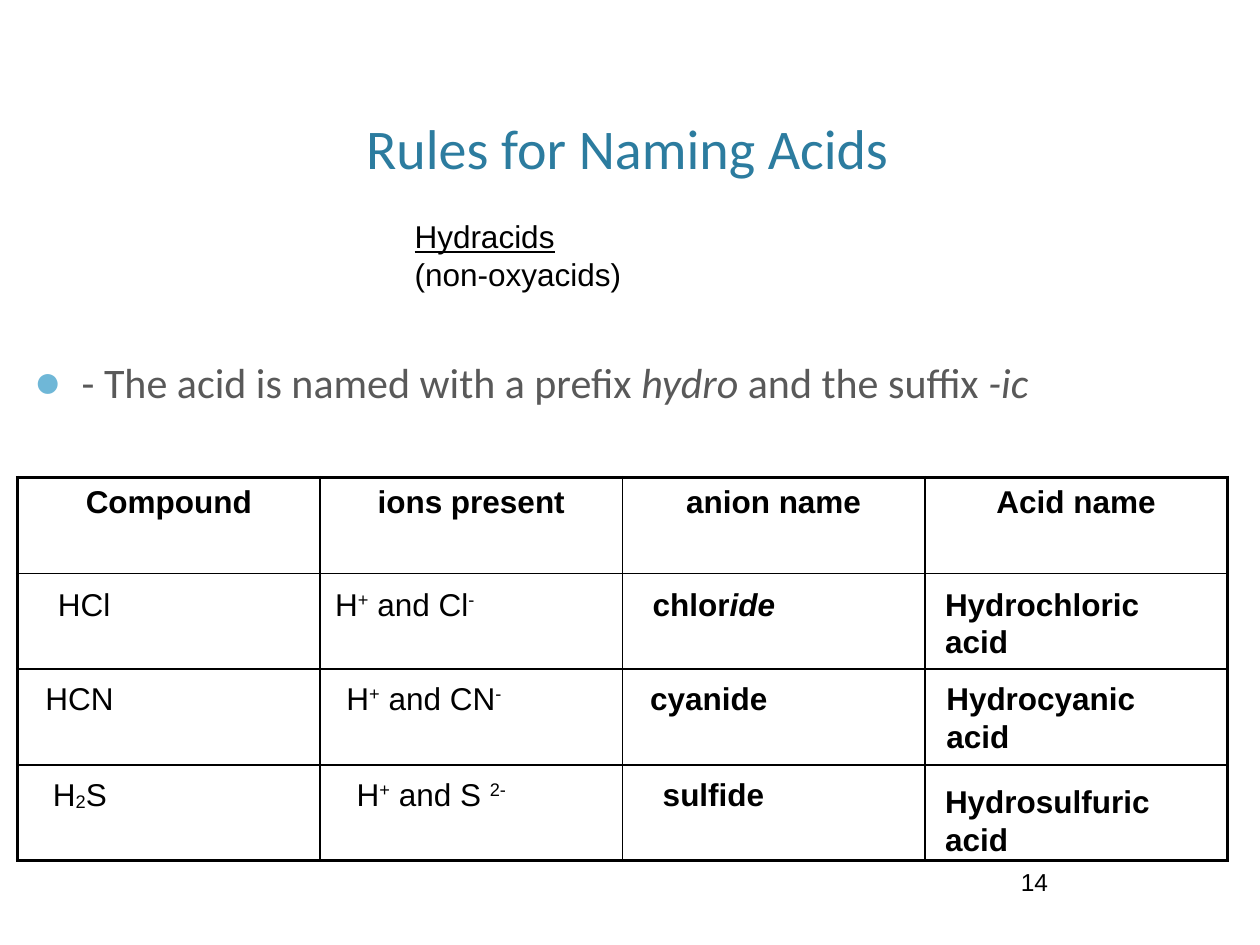
from dataclasses import dataclass

from lxml import etree
from pptx import Presentation
from pptx.dml.color import RGBColor
from pptx.enum.text import MSO_ANCHOR, MSO_AUTO_SIZE, PP_ALIGN
from pptx.oxml.ns import qn
from pptx.util import Pt

CENTER = PP_ALIGN.CENTER
BOTTOM = MSO_ANCHOR.BOTTOM
NO_AUTOFIT = MSO_AUTO_SIZE.NONE
TITLE_ONLY = 5


@dataclass(frozen=True)
class Theme:
    title: str = "2C7C9F"
    body: str = "595959"
    bullet: str = "6FB7D7"
    ink: str = "000000"
    heading_font: str = "Calibri"
    text_font: str = "Arial"
    title_size: int = 32
    body_size: int = 24
    text_size: int = 18
    number_size: int = 14
    inner_line: float = 1
    outer_line: float = 2.25


theme = Theme()


def set_font(paragraph, name, size, color, bold=False):
    font = paragraph.font
    font.name = name
    font.size = Pt(size)
    font.bold = bold
    font.color.rgb = RGBColor.from_string(color)


def add_text(left, top, width, height, margins=(2.88, 0, 2.88, 0), wrap=True):
    box = slide.shapes.add_textbox(Pt(left), Pt(top), Pt(width), Pt(height))
    frame = box.text_frame
    frame.word_wrap = wrap
    (frame.margin_left, frame.margin_top,
     frame.margin_right, frame.margin_bottom) = map(Pt, margins)
    return frame


presentation = Presentation()
presentation.slide_width = Pt(720)
presentation.slide_height = Pt(540)
slide = presentation.slides.add_slide(presentation.slide_layouts[TITLE_ONLY])

# Title
title = slide.shapes.title
title.left, title.top, title.width, title.height = Pt(54), Pt(54), Pt(612), Pt(53)
title_frame = title.text_frame
title_frame.text = "Rules for Naming Acids"
title_frame.auto_size = NO_AUTOFIT
title_frame.vertical_anchor = BOTTOM
title_frame.margin_right = Pt(10.08)
title_frame.paragraphs[0].alignment = CENTER
set_font(title_frame.paragraphs[0], theme.heading_font, theme.title_size, theme.title)

# Naming rule, with a bullet
rule = add_text(12.24, 102.24, 694.08, 437.76, (7.2, 101.5, 10.08, 3.6)).paragraphs[0]
set_font(rule, theme.heading_font, theme.body_size, theme.body)
for text, italic in [("- The acid is named with a prefix ", False), ("hydro ", True),
                     ("and the suffix", False), (" -ic", True)]:
    run = rule.add_run()
    run.text = text
    run.font.italic = italic
properties = rule._p.get_or_add_pPr()
properties.set("marL", str(Pt(27.36)))
properties.set("indent", str(-Pt(27.36)))
bullet_color = etree.Element(qn("a:buClr"))
etree.SubElement(bullet_color, qn("a:srgbClr"), val=theme.bullet)
bullet_parts = [bullet_color,
                etree.Element(qn("a:buSzPct"), val="110000"),
                etree.Element(qn("a:buFont"), typeface=theme.text_font),
                etree.Element(qn("a:buChar"), char="●")]
for position, part in enumerate(bullet_parts):
    properties.insert(position, part)

# Slide number, without side margins so that it stays on one line
number = add_text(578.88, 491.76, 24.48, 23.76, (0, 3.6, 0, 3.6), wrap=False).paragraphs[0]
number.text = "14"
number.alignment = CENTER
set_font(number, theme.text_font, theme.number_size, theme.ink)

# Subtitle
subtitle = add_text(234, 123.84, 192.96, 63.36)
subtitle.text = "Hydracids\n(non-oxyacids)"
for paragraph in subtitle.paragraphs:
    set_font(paragraph, theme.text_font, theme.text_size, theme.ink)
subtitle.paragraphs[0].runs[0].font.underline = True

# Table grid: heavy outside, thin inside
headers = ["Compound", "ions present", "anion name", "Acid name"]
row_count, column_count = 4, len(headers)
column_width, row_height = 172.8, 54.72
table = slide.shapes.add_table(row_count, column_count, Pt(10.08), Pt(272.88),
                               Pt(column_width * column_count),
                               Pt(row_height * row_count)).table
table.first_row = table.horz_banding = False
for column in table.columns:
    column.width = Pt(column_width)
for row in table.rows:
    row.height = Pt(row_height)

for row_index in range(row_count):
    for column_index in range(column_count):
        cell = table.cell(row_index, column_index)
        cell.fill.background()
        edges = [("a:lnL", column_index == 0),
                 ("a:lnR", column_index == column_count - 1),
                 ("a:lnT", row_index == 0),
                 ("a:lnB", row_index == row_count - 1)]
        for position, (tag, is_outer) in enumerate(edges):
            width = theme.outer_line if is_outer else theme.inner_line
            line = etree.Element(qn(tag), w=str(Pt(width)))
            fill = etree.SubElement(line, qn("a:solidFill"))
            etree.SubElement(fill, qn("a:srgbClr"), val=theme.ink)
            cell._tc.get_or_add_tcPr().insert(position, line)

for column_index, header in enumerate(headers):
    cell = table.cell(0, column_index)
    cell.margin_left = cell.margin_right = Pt(4.32)
    cell.margin_top = cell.margin_bottom = Pt(4.32)
    cell.text = header
    paragraph = cell.text_frame.paragraphs[0]
    paragraph.alignment = CENTER
    set_font(paragraph, theme.text_font, theme.text_size, theme.ink, bold=True)

# Entries over the grid: left, top, width, height, bold, runs as (text, baseline %, italic)
entries = [
    (30.24, 334.08, 135.36, 35.28, False, [("HCl", 0, False)]),
    (188.64, 334.08, 156.96, 35.28, False,
     [("H", 0, False), ("+", 32, False), (" and Cl", 0, False), ("-", 32, False)]),
    (370.08, 334.08, 146.16, 28.08, True, [("chlor", 0, False), ("ide", 0, True)]),
    (537.12, 334.08, 154.8, 48.96, True, [("Hydrochloric acid", 0, False)]),
    (23.04, 388.08, 148.32, 35.28, False, [("HCN", 0, False)]),
    (195.12, 388.08, 149.04, 35.28, False,
     [("H", 0, False), ("+", 32, False), (" and CN", 0, False), ("-", 32, False)]),
    (368.64, 388.08, 146.16, 28.08, True, [("cyanide", 0, False)]),
    (537.84, 388.08, 154.8, 48.96, True, [("Hydrocyanic acid", 0, False)]),
    (27.36, 442.8, 148.32, 35.28, False,
     [("H", 0, False), ("2", -6, False), ("S", 0, False)]),
    (200.88, 442.8, 144.72, 35.28, False,
     [("H", 0, False), ("+", 32, False), (" and S ", 0, False), ("2-", 32, False)]),
    (375.84, 442.8, 141.12, 28.08, True, [("sulfide", 0, False)]),
    (537.12, 447.12, 151.92, 48.96, True, [("Hydrosulfuric acid", 0, False)]),
]
for left, top, width, height, bold, runs in entries:
    paragraph = add_text(left, top, width, height).paragraphs[0]
    set_font(paragraph, theme.text_font, theme.text_size, theme.ink, bold)
    for text, baseline, italic in runs:
        run = paragraph.add_run()
        run.text = text
        if italic:
            run.font.italic = True
        if baseline:
            run._r.get_or_add_rPr().set("baseline", str(baseline * 1000))

presentation.save("out.pptx")
